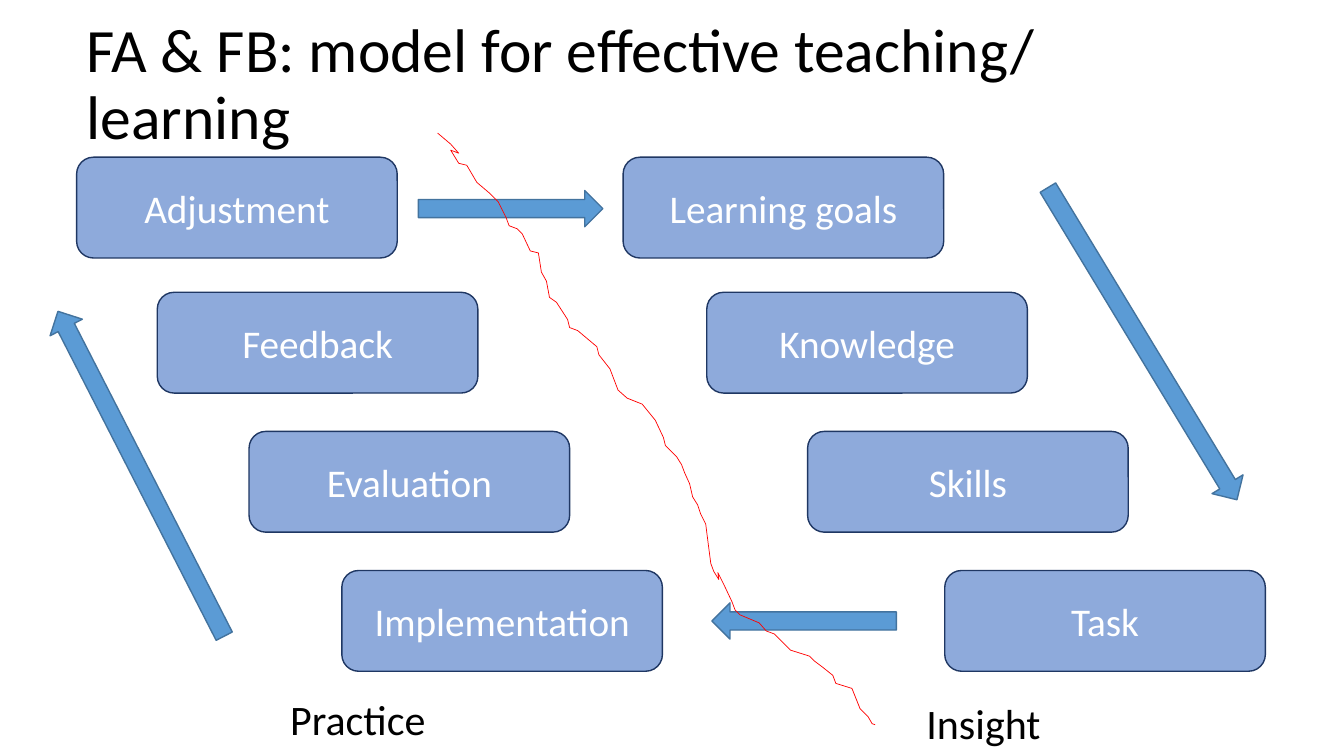
from pptx import Presentation
from pptx.dml.color import RGBColor
from pptx.enum.shapes import MSO_SHAPE
from pptx.enum.text import MSO_ANCHOR, MSO_AUTO_SIZE, PP_ALIGN
from pptx.util import Inches, Pt


def color(code):
    return RGBColor.from_string(code)


class Board:
    font = "Calibri"
    dark, light = "000000", "FFFFFF"
    box_fill, box_line = "8EAADB", "1F3763"
    arrow_fill, arrow_line = "5B9BD5", "43739E"
    split_line = "FF0000"

    def __init__(self, slide):
        self.shapes = slide.shapes

    def add_run(self, frame, text, size, code):
        run = frame.paragraphs[0].add_run()
        run.text = text
        run.font.name = self.font
        run.font.size = Pt(size)
        run.font.color.rgb = color(code)

    def paint(self, shape, fill, line, width=1):
        shape.shadow.inherit = False
        if fill:
            shape.fill.solid()
            shape.fill.fore_color.rgb = color(fill)
        else:
            shape.fill.background()
        shape.line.color.rgb = color(line)
        shape.line.width = Pt(width)

    def title(self, text, *area):
        frame = self.shapes.add_textbox(*map(Inches, area)).text_frame
        frame.word_wrap = True
        frame.vertical_anchor = MSO_ANCHOR.MIDDLE
        frame.paragraphs[0].line_spacing = 0.9
        self.add_run(frame, text, 44, self.dark)

    def label(self, text, *area):
        frame = self.shapes.add_textbox(*map(Inches, area)).text_frame
        frame.word_wrap = False
        frame.auto_size = MSO_AUTO_SIZE.SHAPE_TO_FIT_TEXT
        self.add_run(frame, text, 30, self.dark)

    def box(self, text, left, top):
        area = map(Inches, (left, top, 3.18, 1))
        shape = self.shapes.add_shape(MSO_SHAPE.ROUNDED_RECTANGLE, *area)
        self.paint(shape, self.box_fill, self.box_line)
        frame = shape.text_frame
        frame.vertical_anchor = MSO_ANCHOR.MIDDLE
        frame.paragraphs[0].alignment = PP_ALIGN.CENTER
        self.add_run(frame, text, 28, self.light)

    def arrow(self, left, top, width, angle):
        area = map(Inches, (left, top, width, 0.36))
        shape = self.shapes.add_shape(MSO_SHAPE.RIGHT_ARROW, *area)
        shape.rotation = angle
        self.paint(shape, self.arrow_fill, self.arrow_line)

    def split(self, points):
        """Draw the thin ragged line between the two halves."""
        first, *rest = [(Inches(x), Inches(y)) for x, y in points]
        pen = self.shapes.build_freeform(*first)
        pen.add_line_segments(rest, close=False)
        self.paint(pen.convert_to_shape(), None, self.split_line, 0.5)


TOPS = (1.56, 2.9, 4.28, 5.66)
PRACTICE = (("Adjustment", 0.76), ("Feedback", 1.56),
            ("Evaluation", 2.47), ("Implementation", 3.39))
INSIGHT = (("Learning goals", 6.18), ("Knowledge", 7.01),
           ("Skills", 8.01), ("Task", 9.37))
ARROWS = ((9.52, 3.23, 3.62, 58.8), (-0.41, 4.52, 3.62, 242.9),
          (4.15, 1.89, 1.83, 0), (7.06, 5.98, 1.83, 180))
SPLIT = (
    (4.34, 1.32), (4.47, 1.43), (4.55, 1.52), (4.47, 1.49), (4.55, 1.62),
    (4.63, 1.64), (4.73, 1.81), (4.86, 1.92), (4.94, 2), (5.02, 2.16),
    (5.05, 2.24), (5.13, 2.27), (5.18, 2.32), (5.26, 2.49), (5.34, 2.51),
    (5.37, 2.7), (5.42, 2.79), (5.45, 2.95), (5.52, 3), (5.63, 3.17),
    (5.65, 3.25), (5.73, 3.28), (5.92, 3.44), (5.94, 3.52), (6.05, 3.66),
    (6.13, 3.87), (6.22, 3.95), (6.37, 4.01), (6.5, 4.17), (6.58, 4.34),
    (6.6, 4.42), (6.71, 4.53), (6.76, 4.61), (6.79, 4.69), (6.84, 4.8),
    (6.87, 4.93), (6.92, 5.01), (6.95, 5.1), (7, 5.2), (7.02, 5.36),
    (7.05, 5.59), (7.08, 5.67), (7.13, 5.75), (7.12, 5.68), (7.18, 5.8),
    (7.26, 5.97), (7.29, 6.05), (7.34, 6.1), (7.53, 6.18), (7.6, 6.26),
    (7.68, 6.29), (7.84, 6.45), (8.03, 6.51), (8.08, 6.56), (8.16, 6.62),
    (8.26, 6.7), (8.29, 6.78), (8.45, 6.83), (8.53, 7.03), (8.61, 7.11),
    (8.65, 7.18), (8.68, 7.19))


def main():
    deck = Presentation()
    deck.slide_width, deck.slide_height = Inches(13.33), Inches(7.5)
    board = Board(deck.slides.add_slide(deck.slide_layouts[6]))
    board.title("FA & FB: model for effective teaching/ learning",
                0.76, 0.13, 11.65, 1.45)
    for side in (PRACTICE, INSIGHT):
        for (text, left), top in zip(side, TOPS):
            board.box(text, left, top)
    for arrow in ARROWS:
        board.arrow(*arrow)
    board.split(SPLIT)
    board.label("Practice", 2.78, 6.83, 1.56, 0.61)
    board.label("Insight", 9.09, 6.87, 1.34, 0.61)
    deck.save("out.pptx")


if __name__ == "__main__":
    main()
